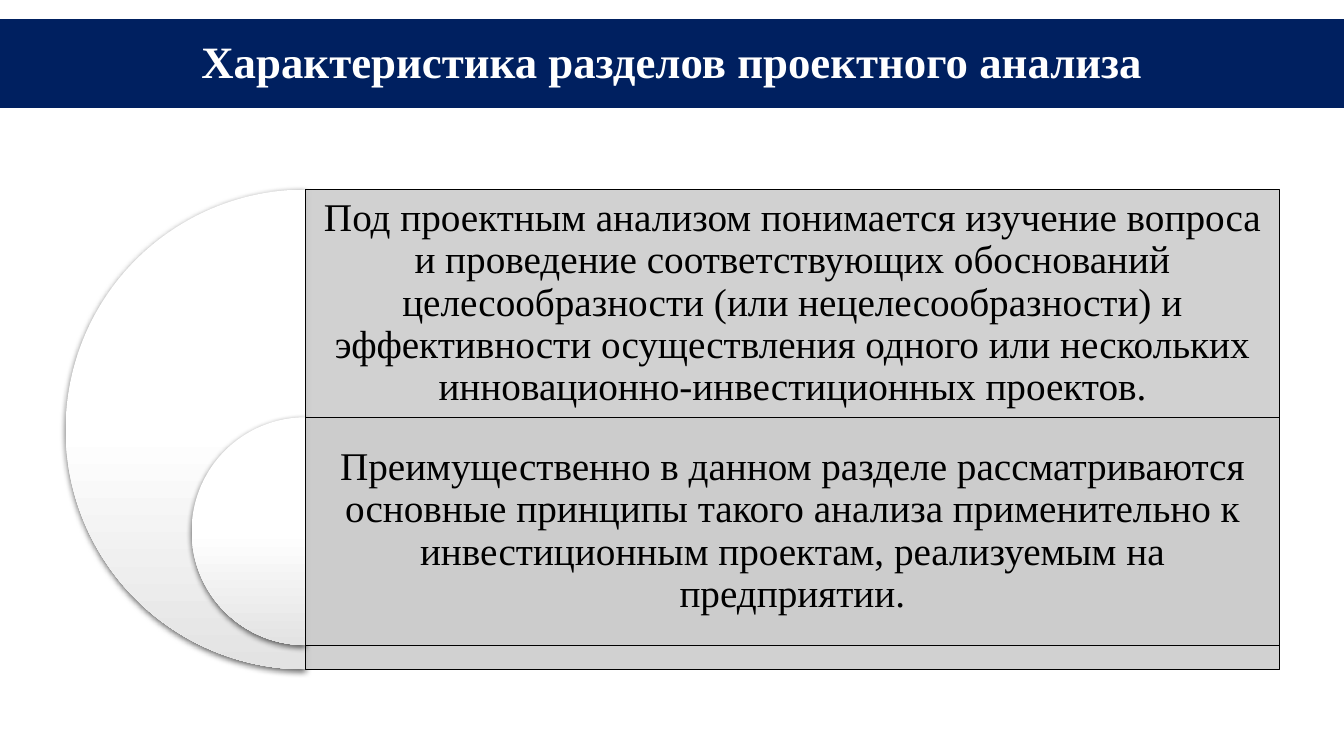
from dataclasses import dataclass

from lxml.etree import SubElement
from pptx import Presentation
from pptx.dml.color import RGBColor
from pptx.enum.shapes import MSO_SHAPE
from pptx.enum.text import MSO_ANCHOR, PP_ALIGN
from pptx.oxml.ns import qn
from pptx.util import Pt


@dataclass(frozen=True)
class Theme:
    font: str = "Times New Roman"
    title_size: int = 32
    body_size: int = 28
    navy: RGBColor = RGBColor(0x00, 0x20, 0x60)
    white: RGBColor = RGBColor(0xFF, 0xFF, 0xFF)
    black: RGBColor = RGBColor(0x00, 0x00, 0x00)
    panel: RGBColor = RGBColor(0xCC, 0xCC, 0xCC)
    pale: RGBColor = RGBColor(0xE3, 0xE3, 0xE3)


THEME = Theme()
SLIDE_WIDTH, SLIDE_HEIGHT = 960, 540
PANEL_LEFT, PANEL_WIDTH = 218.2, 695.5
PANEL_TOP = 135.4
OUTER_HEIGHT, ROW_HEIGHT = 342.7, 162.7

TITLE = "Характеристика разделов проектного анализа"
# Each row: height of its half disc and panel, then its text
ROWS = [
    (OUTER_HEIGHT,
     "Под проектным анализом понимается изучение вопроса и проведение "
     "соответствующих обоснований целесообразности (или нецелесообразности) "
     "и эффективности осуществления одного или нескольких "
     "инновационно-инвестиционных проектов."),
    (ROW_HEIGHT,
     "Преимущественно в данном разделе рассматриваются основные принципы "
     "такого анализа применительно к инвестиционным проектам, реализуемым "
     "на предприятии."),
]


def add_plain_shape(page, kind, left, top, width, height):
    shape = page.shapes.add_shape(kind, Pt(left), Pt(top), Pt(width), Pt(height))
    shape.shadow.inherit = False
    shape.line.fill.background()
    return shape


def write_text(box, text, size, color, bold=False):
    frame = box.text_frame
    frame.word_wrap = True
    frame.vertical_anchor = MSO_ANCHOR.MIDDLE
    para = frame.paragraphs[0]
    para.alignment = PP_ALIGN.CENTER
    para.line_spacing = 0.9
    span = para.add_run()
    span.text = text
    span.font.name = THEME.font
    span.font.size = Pt(size)
    span.font.bold = bold
    span.font.color.rgb = color


def add_title_band(page):
    band = add_plain_shape(page, MSO_SHAPE.RECTANGLE, 0, 13.7, SLIDE_WIDTH, 63.4)
    band.fill.solid()
    band.fill.fore_color.rgb = THEME.navy
    write_text(band, TITLE, THEME.title_size, THEME.white, bold=True)


def add_soft_shadow(shape):
    effects = shape._element.spPr.find(qn("a:effectLst"))
    shadow = SubElement(effects, qn("a:outerShdw"), blurRad=str(Pt(4.5)),
                        dist=str(Pt(1.5)), dir="5400000", rotWithShape="0")
    color = SubElement(shadow, qn("a:srgbClr"), val=str(THEME.black))
    SubElement(color, qn("a:alpha"), val="63000")


def add_half_disc(page, top, diameter):
    disc = add_plain_shape(page, MSO_SHAPE.PIE, PANEL_LEFT - diameter / 2, top,
                           diameter, diameter)
    # Sweep from 90 to 270 degrees: the left half
    disc.adjustments[0] = 54
    disc.adjustments[1] = 162
    disc.fill.gradient()
    disc.fill.gradient_angle = 270
    start, end = disc.fill.gradient_stops
    start.position, end.position = 0.5, 1
    start.color.rgb, end.color.rgb = THEME.white, THEME.pale
    add_soft_shadow(disc)


def add_panel(page, top, height):
    panel = add_plain_shape(page, MSO_SHAPE.RECTANGLE, PANEL_LEFT, top,
                            PANEL_WIDTH, height)
    panel.fill.solid()
    panel.fill.fore_color.rgb = THEME.panel
    color = panel._element.spPr.find(qn("a:solidFill")).find(qn("a:srgbClr"))
    SubElement(color, qn("a:alpha"), val="90000")
    panel.line.color.rgb = THEME.black
    panel.line.width = Pt(0.5)


def add_row_text(page, top, text):
    box = page.shapes.add_textbox(Pt(PANEL_LEFT), Pt(top), Pt(PANEL_WIDTH),
                                  Pt(ROW_HEIGHT))
    frame = box.text_frame
    frame.margin_left = frame.margin_right = Pt(8.4)
    frame.margin_top = frame.margin_bottom = Pt(8.4)
    write_text(box, text, THEME.body_size, THEME.black)


def main():
    deck = Presentation()
    deck.slide_width, deck.slide_height = Pt(SLIDE_WIDTH), Pt(SLIDE_HEIGHT)
    page = deck.slides.add_slide(deck.slide_layouts[6])

    # Heading
    add_title_band(page)

    # Nested half discs with their panels
    for index, (height, text) in enumerate(ROWS):
        top = PANEL_TOP + index * ROW_HEIGHT
        add_half_disc(page, top, height)
        add_panel(page, top, height)
        add_row_text(page, top, text)

    deck.save("out.pptx")


if __name__ == "__main__":
    main()
